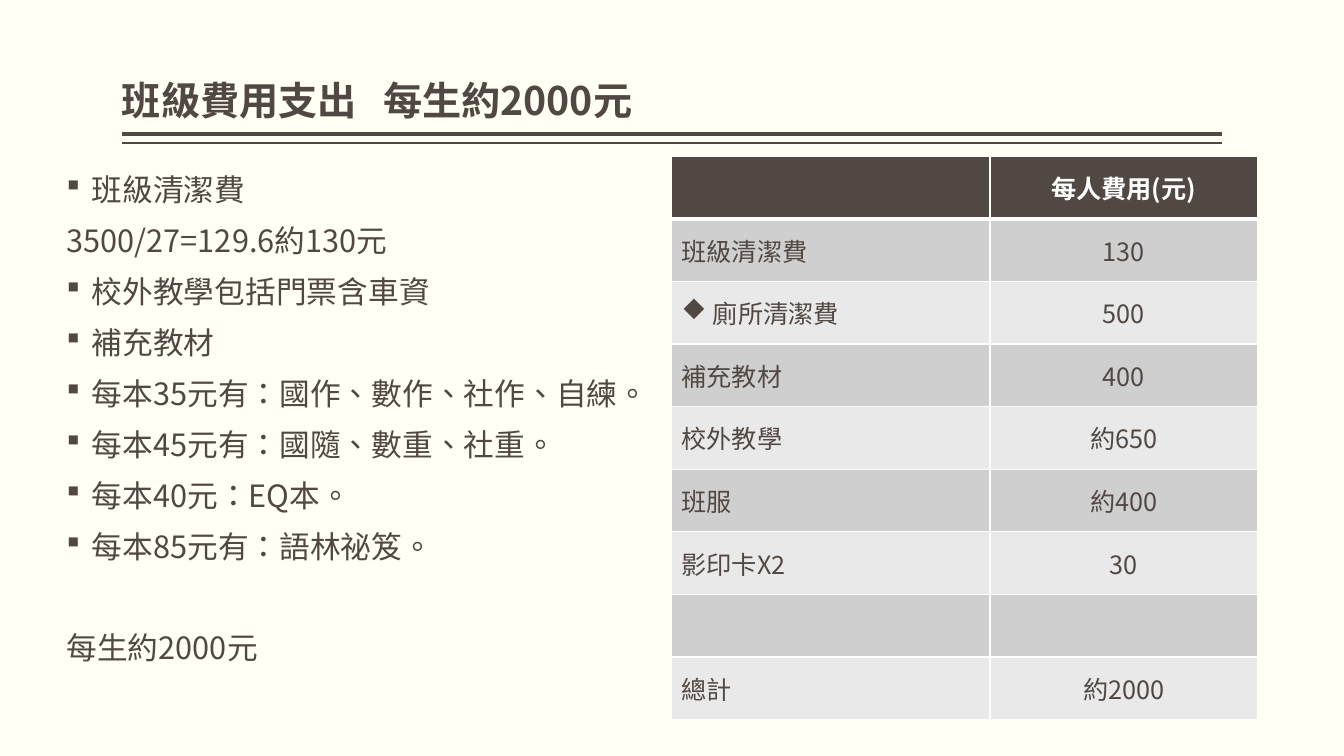
from lxml.etree import SubElement
from pptx import Presentation
from pptx.dml.color import RGBColor
from pptx.enum.lang import MSO_LANGUAGE_ID
from pptx.enum.shapes import MSO_CONNECTOR
from pptx.enum.text import MSO_ANCHOR, MSO_AUTO_SIZE, PP_ALIGN
from pptx.oxml import parse_xml
from pptx.oxml.ns import nsdecls, qn
from pptx.util import Inches, Pt

COLORS = {"paper": "FFFFF3", "ink": "514843", "white": "FFFFFF",
          "dark_band": "D0CFCF", "light_band": "E9E9E9"}
COLORS = {part: RGBColor.from_string(code) for part, code in COLORS.items()}
FONT = "Noto Sans CJK TC"


def style(paragraph, size, color="ink", bold=False):
    for run in paragraph.runs:
        run.font.size = Pt(size)
        run.font.bold = bold
        run.font.name = FONT
        run.font.language_id = MSO_LANGUAGE_ID.TRADITIONAL_CHINESE
        run.font.color.rgb = COLORS[color]
        SubElement(run.font._element, qn("a:ea"), typeface=FONT)


def add_bullet(paragraph, mark, indent):
    properties = paragraph._p.get_or_add_pPr()
    properties.set("marL", str(Inches(indent)))
    properties.set("indent", str(-Inches(indent)))
    SubElement(properties, qn("a:buFont"), typeface="Wingdings", charset="2")
    SubElement(properties, qn("a:buChar"), char=mark)


prs = Presentation()
prs.slide_width, prs.slide_height = Inches(13.33), Inches(7.5)
slide = prs.slides.add_slide(prs.slide_layouts[5])
slide.background.fill.solid()
slide.background.fill.fore_color.rgb = COLORS["paper"]

# Double rule under the title
for y, weight in ((1.33, 3), (1.42, 1)):
    rule = slide.shapes.add_connector(
        MSO_CONNECTOR.STRAIGHT, Inches(12.12), Inches(y), Inches(1.21), Inches(y))
    rule.line.color.rgb = COLORS["ink"]
    rule.line.width = Pt(weight)
    SubElement(rule._element.spPr, qn("a:effectLst"))

# Title, its two halves set apart by a tab stop
title = slide.shapes.title
title.left, title.top = Inches(1.21), Inches(0.08)
title.width, title.height = Inches(10.92), Inches(1.2)
title.text_frame.text = "班級費用支出\t每生約2000元"
title.text_frame.auto_size = MSO_AUTO_SIZE.NONE
title.text_frame.vertical_anchor = MSO_ANCHOR.BOTTOM
title.text_frame.margin_left = title.text_frame.margin_right = 0
heading = title.text_frame.paragraphs[0]
tabs = SubElement(heading._p.get_or_add_pPr(), qn("a:tabLst"))
SubElement(tabs, qn("a:tab"), pos=str(Inches(2.59)), algn="l")
heading.alignment = PP_ALIGN.LEFT
heading.line_spacing = 0.9
style(heading, 28, bold=True)

# Expense notes: text, bulleted, space before
NOTES = [
    ("班級清潔費", True, 0),
    ("3500/27=129.6約130元", False, 18),
    ("校外教學包括門票含車資", True, 18),
    ("補充教材", True, 18),
    ("每本35元有：國作、數作、社作、自練。", True, 18),
    ("每本45元有：國隨、數重、社重。", True, 18),
    ("每本40元：EQ本。", True, 18),
    ("每本85元有：語林祕笈。", True, 18),
    ("每生約2000元", False, 53.6),
]
notes = slide.shapes.add_textbox(
    Inches(0.66), Inches(1.75), Inches(6.17), Inches(5.39)).text_frame
notes.word_wrap = True
notes.margin_left = notes.margin_right = 0
for index, (text, bulleted, gap) in enumerate(NOTES):
    note = notes.add_paragraph() if index else notes.paragraphs[0]
    note.text = text
    if bulleted:
        add_bullet(note, "§", 0.25)
    note.line_spacing = 0.7
    note.space_before = Pt(gap)
    style(note, 21.9)

# Cost table
COSTS = [
    ("", "每人費用(元)"),
    ("班級清潔費", "130"),
    ("廁所清潔費", "500"),
    ("補充教材", "400"),
    ("校外教學", "約650"),
    ("班服", "約400"),
    ("影印卡X2", "30"),
    ("", ""),
    ("總計", "約2000"),
]
costs = slide.shapes.add_table(
    len(COSTS), 2, Inches(6.66), Inches(1.55), Inches(5.81), Inches(5.59)).table
costs.columns[0].width, costs.columns[1].width = Inches(3.16), Inches(2.65)
for row, entries in enumerate(COSTS):
    band = "ink" if row == 0 else "dark_band" if row % 2 else "light_band"
    for column, text in enumerate(entries):
        cell = costs.cell(row, column)
        cell.fill.solid()
        cell.fill.fore_color.rgb = COLORS[band]
        cell.vertical_anchor = MSO_ANCHOR.MIDDLE
        # White borders, heavier below the header
        borders = {"lnL": 1, "lnR": 1, "lnT": 3 if row == 1 else 1,
                   "lnB": 3 if row == 0 else 1}
        for position, (side, weight) in enumerate(borders.items()):
            cell._tc.get_or_add_tcPr().insert(position, parse_xml(
                f'<a:{side} {nsdecls("a")} w="{Pt(weight)}"><a:solidFill>'
                f'<a:srgbClr val="{COLORS["white"]}"/></a:solidFill></a:{side}>'))
        cell.text_frame.text = text
        entry = cell.text_frame.paragraphs[0]
        if text == "廁所清潔費":
            add_bullet(entry, "u", 0.31)
        entry.alignment = PP_ALIGN.CENTER if column else PP_ALIGN.LEFT
        style(entry, 18, "ink" if row else "white", bold=row == 0)

prs.save("out.pptx")
